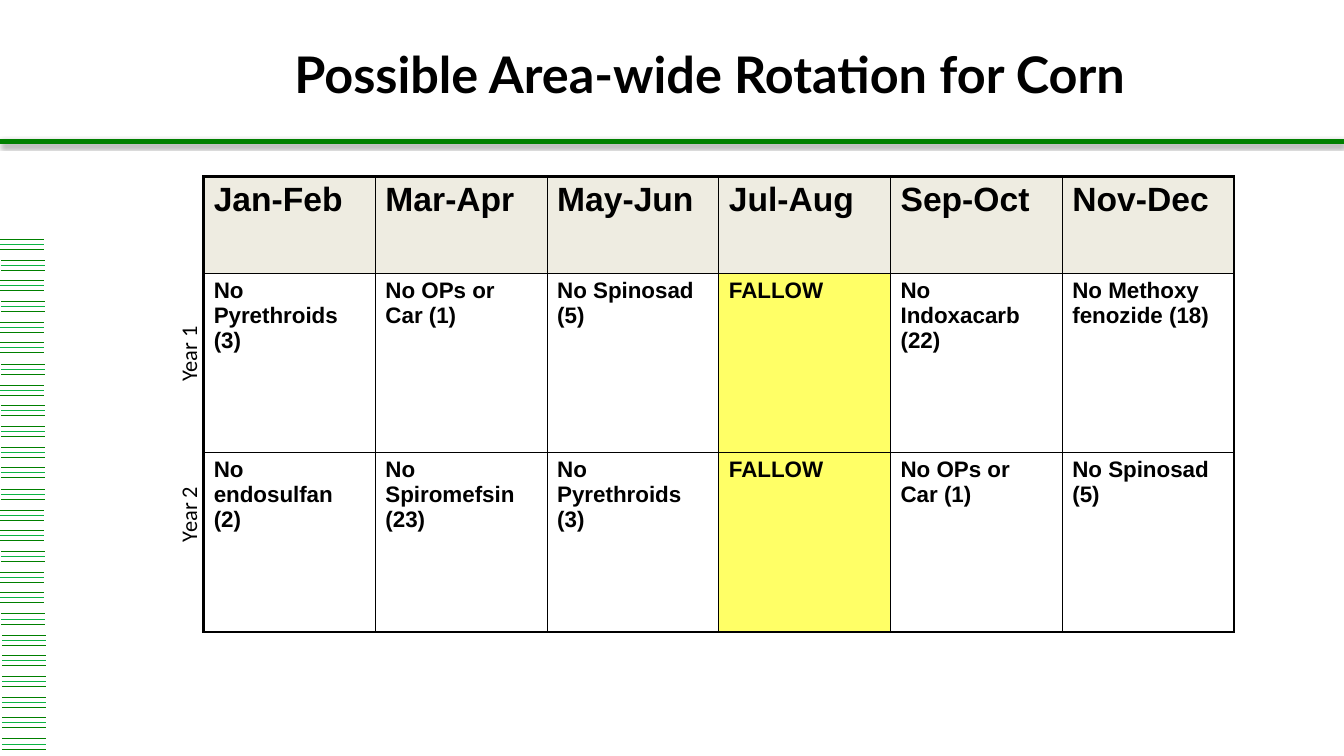
from dataclasses import dataclass

from lxml.etree import SubElement
from pptx import Presentation
from pptx.dml.color import RGBColor
from pptx.enum.shapes import MSO_CONNECTOR as CONN
from pptx.enum.text import MSO_ANCHOR as ANCHOR, MSO_AUTO_SIZE as AUTO, PP_ALIGN as ALIGN
from pptx.oxml.ns import qn
from pptx.util import Emu, Pt

PX = 9144  # EMU per px, 100 px to the inch


@dataclass(frozen=True)
class Theme:
    ink: str = "000000"
    paper: str = "FFFFFF"
    green: str = "008000"
    light_green: str = "0AB443"
    header: str = "EEECE1"
    fallow: str = "FFFF66"
    title_pt: int = 36
    header_pt: int = 24
    body_pt: int = 16
    rule_pt: float = 3.5
    stripe_pt: float = 0.5
    frame_pt: float = 2.25
    grid_pt: float = 1


@dataclass(frozen=True)
class Box:
    left: int
    top: int
    width: int
    height: int

    def emu(self) -> list[Emu]:
        return [px(v) for v in (self.left, self.top, self.width, self.height)]


@dataclass(frozen=True)
class YearLabel:
    text: str
    box: Box


THEME = Theme()
TITLE_BOX = Box(264, 33, 892, 80)
TABLE_BOX = Box(202, 175, 1022, 452)
ROW_HEIGHTS = (96, 178, 178)
ROTATION = (
    ("Jan-Feb", "Mar-Apr", "May-Jun", "Jul-Aug", "Sep-Oct", "Nov-Dec"),
    ("No Pyrethroids (3)", "No OPs or Car (1)", "No Spinosad (5)",
     "FALLOW", "No Indoxacarb (22)", "No Methoxy fenozide (18)"),
    ("No endosulfan (2)", "No Spiromefsin (23)", "No Pyrethroids (3)",
     "FALLOW", "No OPs or Car (1)", "No Spinosad (5)"),
)
YEARS = (
    YearLabel("Year 1", Box(145, 328, 84, 37)),
    YearLabel("Year 2", Box(145, 487, 84, 37)),
)
STRIPE_LEFTS = "0101001011111001001222222"  # px offset of each stripe trio
STRIPE_TOP, STRIPE_SPAN, STRIPE_WIDTH = 237, 496, 44
TRIO = ((0, THEME.green), (5, THEME.light_green), (10, THEME.green))


def px(n: int) -> Emu:
    return Emu(n * PX)


def rgb(color: str) -> RGBColor:
    return RGBColor.from_string(color)


def write(tf, text: str, align=ALIGN.LEFT, **fmt) -> None:
    """Fill the frame with one run, formatted from font attributes."""
    p = tf.paragraphs[0]
    p.alignment = align
    r = p.add_run()
    r.text = text
    for name, value in fmt.items():
        setattr(r.font, name, value)
    r.font.color.rgb = rgb(THEME.ink)


def add_line(shapes, left: int, y: int, width: int, color: str, weight: float):
    """Draw a level line and return its empty effect list."""
    line = shapes.add_connector(CONN.STRAIGHT, px(left), px(y), px(left + width), px(y))
    line.line.color.rgb = rgb(color)
    line.line.width = Pt(weight)
    return SubElement(line._element.spPr, qn("a:effectLst"))


def add_rule(shapes) -> None:
    effects = add_line(shapes, 0, 140, 1333, THEME.green, THEME.rule_pt)
    shadow = SubElement(effects, qn("a:outerShdw"), blurRad=str(Pt(3.1)),
                        dist=str(Pt(1.6)), dir="5400000", rotWithShape="0")
    color = SubElement(shadow, qn("a:srgbClr"), val=THEME.ink)
    SubElement(color, qn("a:alpha"), val="38000")


def add_stripes(shapes) -> None:
    group = shapes.add_group_shape().shapes
    for i, left in enumerate(STRIPE_LEFTS):
        top = STRIPE_TOP + round(i * STRIPE_SPAN / (len(STRIPE_LEFTS) - 1))
        for offset, color in TRIO:
            add_line(group, int(left), top + offset, STRIPE_WIDTH, color, THEME.stripe_pt)


def set_title(sp, text: str) -> None:
    sp.left, sp.top, sp.width, sp.height = TITLE_BOX.emu()
    sp.fill.solid()
    sp.fill.fore_color.rgb = rgb(THEME.paper)
    tf = sp.text_frame
    tf.auto_size = AUTO.NONE
    tf.vertical_anchor = ANCHOR.MIDDLE
    write(tf, text, ALIGN.CENTER, name="Lato", size=Pt(THEME.title_pt), bold=True)


def set_borders(cell, outer: dict[str, bool]) -> None:
    """Give the outer sides the frame weight and the others the grid weight."""
    tc_pr = cell._tc.get_or_add_tcPr()
    for side, is_outer in outer.items():
        weight = THEME.frame_pt if is_outer else THEME.grid_pt
        ln = SubElement(tc_pr, qn(f"a:ln{side}"), w=str(Pt(weight)))
        SubElement(SubElement(ln, qn("a:solidFill")), qn("a:srgbClr"), val=THEME.ink)


def add_rotation_table(shapes) -> None:
    n_rows, n_cols = len(ROTATION), len(ROTATION[0])
    table = shapes.add_table(n_rows, n_cols, *TABLE_BOX.emu()).table
    table.first_row = table.horz_banding = False
    for col in table.columns:
        col.width = Emu(px(TABLE_BOX.width) // n_cols)
    for i, (height, texts) in enumerate(zip(ROW_HEIGHTS, ROTATION)):
        table.rows[i].height = px(height)
        for j, text in enumerate(texts):
            cell = table.cell(i, j)
            set_borders(cell, {"L": j == 0, "R": j == n_cols - 1,
                               "T": i == 0, "B": i == n_rows - 1})
            fill = THEME.header if i == 0 else THEME.fallow if text == "FALLOW" else None
            if fill:
                cell.fill.solid()
                cell.fill.fore_color.rgb = rgb(fill)
            else:
                cell.fill.background()
            size = THEME.body_pt if i else THEME.header_pt
            write(cell.text_frame, text, name="Arial", size=Pt(size), bold=True)


def add_year(shapes, year: YearLabel) -> None:
    sp = shapes.add_textbox(*year.box.emu())
    sp.rotation = 270
    sp.text_frame.word_wrap = True
    write(sp.text_frame, year.text, name="Calibri", size=Pt(THEME.body_pt))


def main() -> None:
    prs = Presentation()
    prs.slide_width, prs.slide_height = px(1333), px(750)
    slide = prs.slides.add_slide(prs.slide_layouts[5])
    shapes = slide.shapes
    add_rule(shapes)
    add_stripes(shapes)
    set_title(shapes.title, "Possible Area-wide Rotation for Corn ")
    add_rotation_table(shapes)
    for year in YEARS:
        add_year(shapes, year)
    prs.save("out.pptx")


if __name__ == "__main__":
    main()
